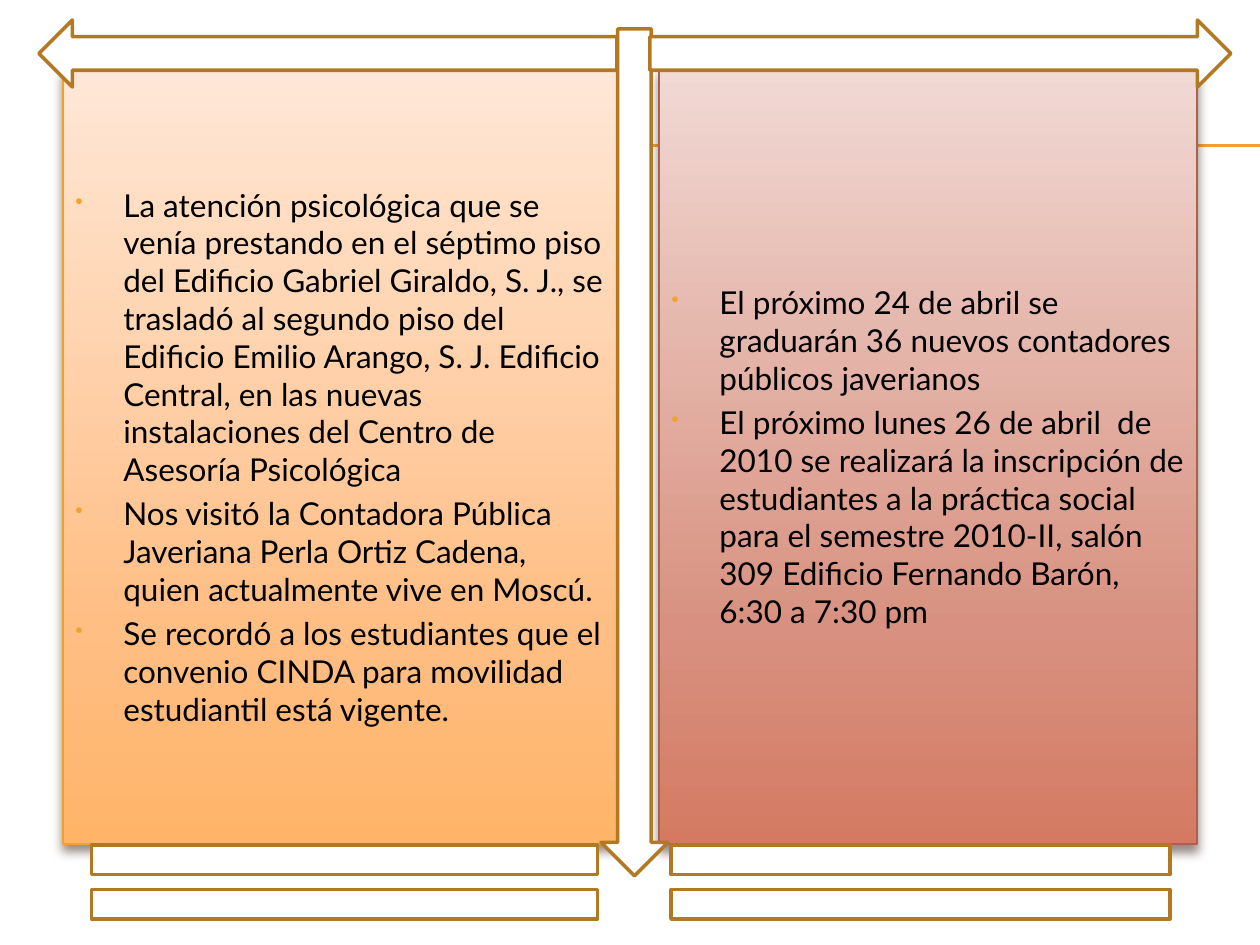
from lxml.etree import SubElement
from pptx import Presentation
from pptx.dml.color import RGBColor
from pptx.enum.shapes import MSO_CONNECTOR, MSO_SHAPE
from pptx.enum.text import MSO_ANCHOR, PP_ALIGN
from pptx.oxml.ns import qn
from pptx.util import Emu, Pt

SLIDE_WIDTH, SLIDE_HEIGHT = 1260, 945
ARROW_THICKNESS = 67
GOLD = RGBColor(0xF0, 0xA2, 0x2E)
DARK_GOLD = RGBColor(0xB2, 0x78, 0x22)
BRICK = RGBColor(0xA5, 0x64, 0x4E)
BROWN = RGBColor(0x4E, 0x3B, 0x30)
WHITE = RGBColor(0xFF, 0xFF, 0xFF)
BLACK = RGBColor(0, 0, 0)
ORANGE_STOPS = [
    (0, RGBColor(0xFF, 0xE7, 0xD7)),
    (72, RGBColor(0xFF, 0xBE, 0x84)),
    (100, RGBColor(0xFF, 0xB4, 0x68)),
]
RED_STOPS = [
    (0, RGBColor(0xF1, 0xD9, 0xD4)),
    (72, RGBColor(0xD8, 0x91, 0x80)),
    (100, RGBColor(0xD4, 0x7A, 0x62)),
]
LEFT_NEWS = [
    "La atención psicológica que se venía prestando en el séptimo piso del "
    "Edificio Gabriel Giraldo, S. J., se trasladó al segundo piso del Edificio "
    "Emilio Arango, S. J. Edificio Central, en las nuevas instalaciones del "
    "Centro de Asesoría Psicológica",
    "Nos visitó la Contadora Pública Javeriana Perla Ortiz Cadena, quien "
    "actualmente vive en Moscú.",
    "Se recordó a los estudiantes que el convenio CINDA para movilidad "
    "estudiantil está vigente.",
]
RIGHT_NEWS = [
    "El próximo 24 de abril se graduarán 36 nuevos contadores públicos javerianos",
    "El próximo lunes 26 de abril  de 2010 se realizará la inscripción de "
    "estudiantes a la práctica social  para el semestre 2010-II, salón 309 "
    "Edificio Fernando Barón, 6:30 a 7:30 pm",
]


def px(length):
    """Turn pixels into EMU."""
    return Emu(round(length * 914400 / 126))


def add_rule(slide, y):
    """Draw a thin horizontal rule that runs to the right edge."""
    rule = slide.shapes.add_connector(
        MSO_CONNECTOR.STRAIGHT, px(71), px(y), px(SLIDE_WIDTH), px(y)
    )
    rule.line.color.rgb = GOLD
    rule.line.width = Pt(0.75)
    SubElement(rule._element.spPr, qn("a:effectLst"))


def add_outlined(slide, kind, box, line_color=DARK_GOLD, line_width=2):
    """Add a white preset shape with a coloured outline."""
    shape = slide.shapes.add_shape(kind, *map(px, box))
    shape.shadow.inherit = False
    shape.fill.solid()
    shape.fill.fore_color.rgb = WHITE
    shape.line.color.rgb = line_color
    shape.line.width = Pt(line_width)
    return shape


def set_gradient(shape, stops):
    """Fill a shape with a top-to-bottom gradient."""
    shape.fill.gradient()
    shape.fill.gradient_angle = 270
    stop_list = shape._element.spPr.find(qn("a:gradFill")).find(qn("a:gsLst"))
    for old_stop in list(stop_list):
        stop_list.remove(old_stop)
    for position, color in stops:
        stop = SubElement(stop_list, qn("a:gs"), pos=str(position * 1000))
        SubElement(stop, qn("a:srgbClr"), val=str(color))


def add_shadow(shape):
    """Put a soft shadow below a shape."""
    effects = shape._element.spPr.find(qn("a:effectLst"))
    shadow = SubElement(
        effects, qn("a:outerShdw"), blurRad=str(Pt(6)), dist=str(Pt(4)),
        dir="5400000", rotWithShape="0",
    )
    color = SubElement(shadow, qn("a:srgbClr"), val=str(BROWN))
    SubElement(color, qn("a:alpha"), val="60000")


def add_bullet(paragraph):
    """Give a paragraph a small gold bullet with a hanging indent."""
    properties = paragraph._p.get_or_add_pPr()
    properties.set("marL", str(px(48)))
    properties.set("indent", str(px(-48)))
    color = SubElement(properties, qn("a:buClr"))
    SubElement(color, qn("a:srgbClr"), val=str(GOLD))
    SubElement(properties, qn("a:buSzPct"), val="70000")
    SubElement(properties, qn("a:buChar"), char="•")


def add_panel(slide, box, stops, line_color, news):
    """Add a gradient panel with bulleted news."""
    panel = add_outlined(slide, MSO_SHAPE.RECTANGLE, box, line_color, 0.79)
    set_gradient(panel, stops)
    add_shadow(panel)
    frame = panel.text_frame
    frame.word_wrap = True
    frame.vertical_anchor = MSO_ANCHOR.MIDDLE
    for index, item in enumerate(news):
        paragraph = frame.add_paragraph() if index else frame.paragraphs[0]
        paragraph.text = item
        add_bullet(paragraph)
        paragraph.alignment = PP_ALIGN.LEFT
        if index:
            paragraph.space_before = Pt(3.6)
        paragraph.font.name = "Lato"
        paragraph.font.size = Pt(18)
        paragraph.font.color.rgb = BLACK


def main():
    """Build and save the slide."""
    presentation = Presentation()
    presentation.slide_width = px(SLIDE_WIDTH)
    presentation.slide_height = px(SLIDE_HEIGHT)
    slide = presentation.slides.add_slide(presentation.slide_layouts[6])
    for y in (145, 146):
        add_rule(slide, y)
    add_panel(slide, (63, 69, 557, 775), ORANGE_STOPS, GOLD, LEFT_NEWS)
    add_panel(slide, (659, 69, 538, 775), RED_STOPS, BRICK, RIGHT_NEWS)
    for kind, box in (
        (MSO_SHAPE.DOWN_ARROW, (601, 29, ARROW_THICKNESS, 847)),
        (MSO_SHAPE.RIGHT_ARROW, (650, 20, 581, ARROW_THICKNESS)),
        (MSO_SHAPE.LEFT_ARROW, (39, 20, 578, ARROW_THICKNESS)),
        (MSO_SHAPE.MATH_EQUAL, (0, 819, 689, 126)),
        (MSO_SHAPE.MATH_EQUAL, (581, 819, 679, 126)),
    ):
        add_outlined(slide, kind, box)
    presentation.save("out.pptx")


if __name__ == "__main__":
    main()
